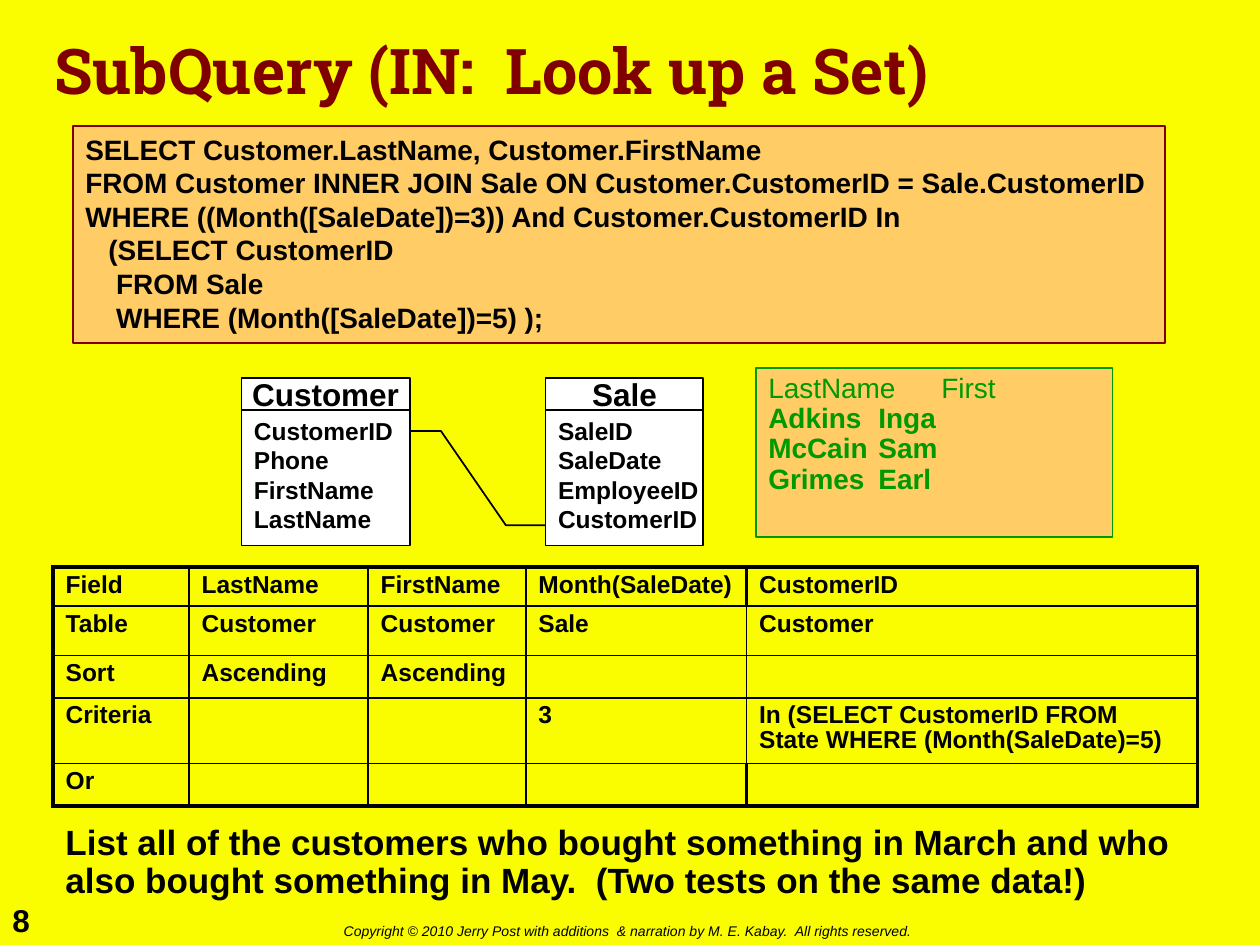
from lxml import etree
from pptx import Presentation
from pptx import util as u
from pptx.dml.color import RGBColor
from pptx.enum import shapes, text
from pptx.oxml.ns import qn

Cm, Pt = u.Cm, u.Pt
BLACK, WHITE, MAROON, GREEN, PEACH, YELLOW = (
    "000000", "FFFFFF", "800000", "009900", "FFCC66", "FAFD00")


def color(hex_value):
    return RGBColor.from_string(hex_value)


def cm(box):
    return [Cm(v) for v in box]


def set_attrs(obj, **values):
    for name, value in values.items():
        setattr(obj, name, value)


def format_font(font, hex_value=BLACK, **values):
    set_attrs(font, **{"name": "Arial", "bold": True, **values})
    font.color.rgb = color(hex_value)


def write(tf, lines, size, hex_value=BLACK, align=text.PP_ALIGN.LEFT, spacing=1.0,
          anchor=text.MSO_ANCHOR.TOP, wrap=False, **font):
    set_attrs(tf, word_wrap=wrap, vertical_anchor=anchor, auto_size=text.MSO_AUTO_SIZE.NONE)
    for i, line in enumerate(lines):
        p = tf.paragraphs[0] if i == 0 else tf.add_paragraph()
        set_attrs(p, alignment=align, line_spacing=spacing)
        r = p.add_run()
        r.text = line
        format_font(r.font, hex_value, size=Pt(size), **font)


def add_box(s, box, fill, line):
    sp = s.shapes.add_shape(shapes.MSO_SHAPE.RECTANGLE, *cm(box))
    sp.shadow.inherit = False
    sp.fill.solid()
    sp.fill.fore_color.rgb = color(fill)
    sp.line.color.rgb = color(line)
    sp.line.width = Pt(1)
    return sp


def add_label(s, box, line, size, **options):
    sp = s.shapes.add_textbox(*cm(box))
    write(sp.text_frame, [line], size, **options)


def add_title(s, box, line):
    sp = s.shapes.title
    set_attrs(sp, **dict(zip(("left", "top", "width", "height"), cm(box))))
    write(sp.text_frame, [line], 36, MAROON, spacing=0.9, wrap=True,
          anchor=text.MSO_ANCHOR.MIDDLE, name="Roboto Slab")


def add_query(s, box, lines):
    sp = add_box(s, box, PEACH, MAROON)
    write(sp.text_frame, lines, 16)


def add_results(s, box, rows):
    sp = add_box(s, box, PEACH, GREEN)
    write(sp.text_frame, ["\t".join(row) for row in rows], 16, GREEN, spacing=0.9, wrap=True)
    for i, p in enumerate(sp.text_frame.paragraphs):
        pPr = p._p.get_or_add_pPr()
        pPr.set("marL", str(Cm(0.95)))
        pPr.set("indent", str(-Cm(0.95)))
        tabs = etree.SubElement(pPr, qn("a:tabLst"))
        etree.SubElement(tabs, qn("a:tab"), pos=str(Cm(4.29)), algn="l")
        p.runs[0].font.bold = i > 0


def add_entity(s, box, name, fields):
    x, y, w, h = box
    head = 0.64
    body = add_box(s, (x, y + head, w, h - head), WHITE, BLACK)
    write(body.text_frame, fields, 14)
    header = add_box(s, (x, y, w, head), WHITE, BLACK)
    write(header.text_frame, [name], 18, align=text.PP_ALIGN.CENTER,
          anchor=text.MSO_ANCHOR.MIDDLE)


def add_join(s, box, stub):
    x, y, w, h = box
    points = [(x + stub, y), (x + w - 0.8, y + h), (x + w, y + h)]
    ff = s.shapes.build_freeform(Cm(x), Cm(y))
    ff.add_line_segments([cm(point) for point in points], close=False)
    sp = ff.convert_to_shape()
    sp.shadow.inherit = False
    sp.fill.background()
    sp.line.color.rgb = color(BLACK)
    sp.line.width = Pt(1)


def set_borders(cell, widths):
    tcPr = cell._tc.get_or_add_tcPr()
    for side, width in widths.items():
        ln = etree.SubElement(tcPr, qn(f"a:ln{side}"), w=str(Pt(width)))
        fill = etree.SubElement(ln, qn("a:solidFill"))
        etree.SubElement(fill, qn("a:srgbClr"), val=BLACK)


def add_grid(s, origin, widths, heights, rows):
    box = (*origin, sum(widths), sum(heights))
    tbl = s.shapes.add_table(len(heights), len(widths), *cm(box)).table
    set_attrs(tbl, first_row=False, horz_banding=False)
    for col, width in zip(tbl.columns, widths):
        col.width = Cm(width)
    for row, height in zip(tbl.rows, heights):
        row.height = Cm(height)
    last_row, last_col = len(heights) - 1, len(widths) - 1
    for i, row in enumerate(rows):
        outer_row = i in (0, last_row)
        for j, value in enumerate(row):
            cell = tbl.cell(i, j)
            heavy = {
                "L": j == 0 or (outer_row and j == last_col),
                "R": j == last_col or (outer_row and j == last_col - 1),
                "T": i == 0,
                "B": i == last_row,
            }
            set_borders(cell, {side: 2.25 if on else 1 for side, on in heavy.items()})
            cell.fill.background()
            p = cell.text_frame.paragraphs[0]
            p.line_spacing = 0.9
            if value:
                r = p.add_run()
                r.text = value
                format_font(r.font, size=Pt(14))
            else:
                p._p.get_or_add_endParaRPr().set("sz", "1400")


def main():
    prs = Presentation()
    prs.slide_width, prs.slide_height = Cm(25.4), Cm(19.05)
    s = prs.slides.add_slide(prs.slide_layouts[5])
    s.background.fill.solid()
    s.background.fill.fore_color.rgb = color(YELLOW)

    add_title(s, (0.84, 0.43, 21.79, 2.11), "SubQuery (IN:  Look up a Set)")
    add_label(s, (0, 18.03, 1.27, 1.02), "8", 18)
    add_label(s, (6.68, 18.47, 12.29, 0.61),
              "Copyright © 2010 Jerry Post with additions  & narration by M. E. Kabay.  "
              "All rights reserved.", 8, bold=False, italic=True)
    add_label(s, (1.07, 16.51, 23.06, 2.11),
              "List all of the customers who bought something in March and who also bought "
              "something in May.  (Two tests on the same data!)", 20, spacing=0.9, wrap=True)
    add_results(s, (15.24, 7.42, 7.19, 3.4), [
        ("LastName", "First"), ("Adkins", "Inga"), ("McCain", "Sam"), ("Grimes", "Earl")])
    add_query(s, (1.47, 2.54, 22.02, 4.37), [
        "SELECT Customer.LastName, Customer.FirstName",
        "FROM Customer INNER JOIN Sale ON Customer.CustomerID = Sale.CustomerID",
        "WHERE ((Month([SaleDate])=3)) And Customer.CustomerID In",
        "   (SELECT CustomerID",
        "    FROM Sale",
        "    WHERE (Month([SaleDate])=5) );",
    ])
    add_grid(s, (1.07, 11.43), (2.74, 3.61, 3.18, 4.45, 9.09), (0.79, 0.99, 0.84, 1.33, 0.84), [
        ("Field", "LastName", "FirstName", "Month(SaleDate)", "CustomerID"),
        ("Table", "Customer", "Customer", "Sale", "Customer"),
        ("Sort", "Ascending", "Ascending", "", ""),
        ("Criteria", "", "", "3", "In (SELECT CustomerID FROM State WHERE (Month(SaleDate)=5)"),
        ("Or", "", "", "", ""),
    ])
    add_entity(s, (4.87, 7.62, 3.39, 3.38), "Customer",
               ["CustomerID", "Phone", "FirstName", "LastName"])
    add_entity(s, (11, 7.62, 3.18, 3.38), "Sale",
               ["SaleID", "SaleDate", "EmployeeID", "CustomerID"])
    add_join(s, (8.26, 8.69, 2.74, 1.9), 0.63)
    prs.save("out.pptx")


if __name__ == "__main__":
    main()
